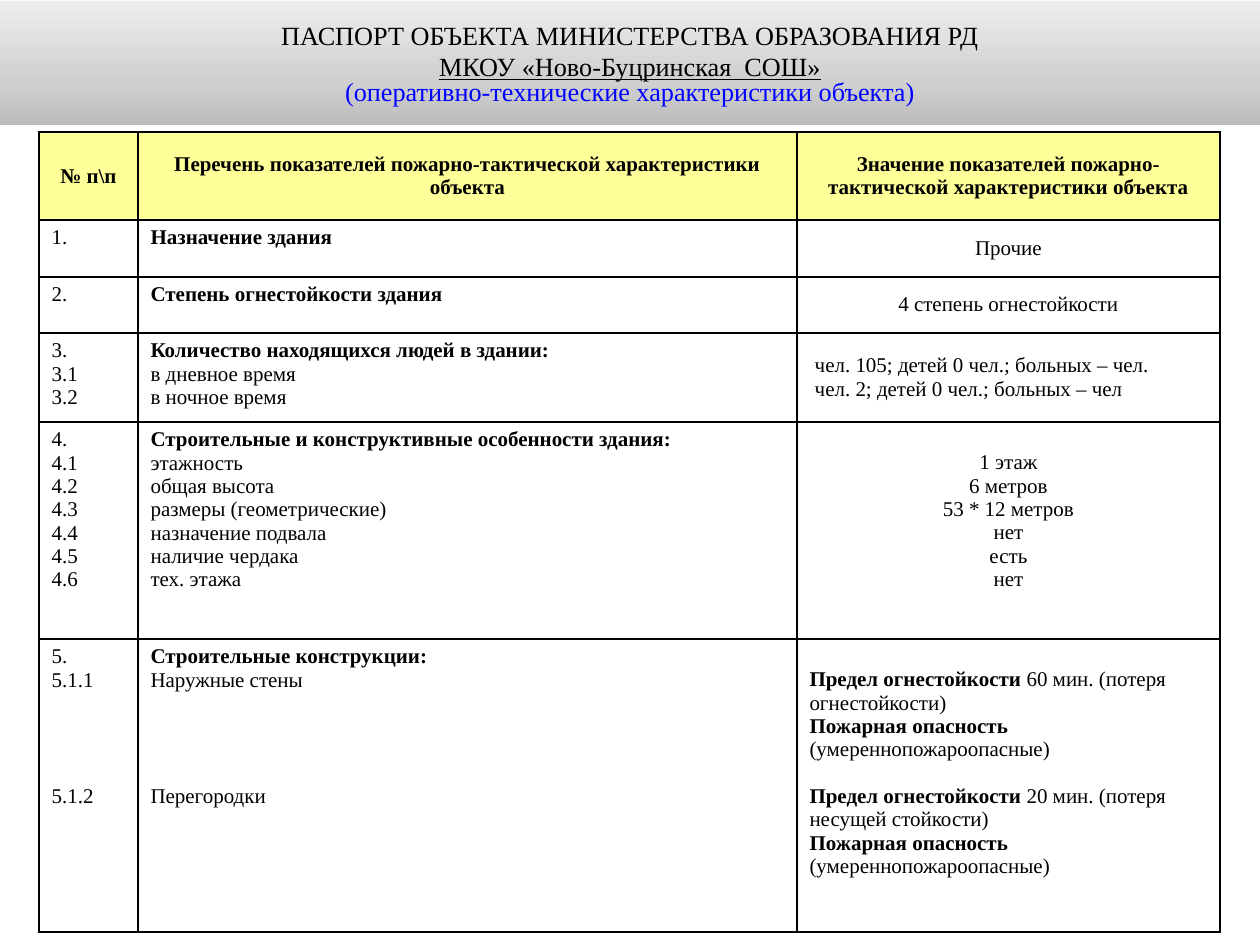
import copy

import lxml.etree
import pptx
import pptx.dml.color
import pptx.enum.shapes
import pptx.enum.text
import pptx.oxml
import pptx.oxml.ns
import pptx.util

SCALE = 914400 / 126
ALIGN = pptx.enum.text.PP_ALIGN
MIDDLE = pptx.enum.text.MSO_ANCHOR.MIDDLE
LINE = 13.3  # height in points of one line of table text


def px(n):
    return pptx.util.Emu(round(n * SCALE))


def rgb(value):
    return pptx.dml.color.RGBColor.from_string(value)


class Deck:
    font = "Times New Roman"
    black = "000000"
    cell_size = 12
    title_size = 15

    def __init__(self, width, height):
        self.prs = pptx.Presentation()
        self.prs.slide_width, self.prs.slide_height = px(width), px(height)
        self.s = self.prs.slides.add_slide(self.prs.slide_layouts[6])

    def format_run(self, r, size, color=black, bold=False, underline=False):
        r.font.name, r.font.size = self.font, pptx.util.Pt(size)
        r.font.bold, r.font.underline = bold, underline
        r.font.color.rgb = rgb(color)

    def banner(self, x, y, w, h, stops, lines):
        """Stops run from bottom to top; lines are (text, run style, line spacing)."""
        sp = self.s.shapes.add_shape(
            pptx.enum.shapes.MSO_SHAPE.RECTANGLE, px(x), px(y), px(w), px(h))
        sp.shadow.inherit = False
        sp.line.fill.background()
        sp.fill.gradient()
        sp.fill.gradient_angle = 90
        first = sp.fill._fill._gradFill.gsLst[0]
        first.addnext(copy.deepcopy(first))
        for stop, (position, color) in zip(sp.fill.gradient_stops, stops):
            stop.position, stop.color.rgb = position, rgb(color)
        tf = sp.text_frame
        tf.word_wrap, tf.vertical_anchor = True, MIDDLE
        for i, (text, style, spacing) in enumerate(lines):
            p = tf.add_paragraph() if i else tf.paragraphs[0]
            p.text, p.alignment, p.line_spacing = text, ALIGN.CENTER, spacing
            self.format_run(p.runs[0], self.title_size, **style)

    def borders(self, cell):
        tc_pr = cell._tc.get_or_add_tcPr()
        for i, side in enumerate(("lnL", "lnR", "lnT", "lnB")):
            tc_pr.insert(i, pptx.oxml.parse_xml(
                f'<a:{side} {pptx.oxml.ns.nsdecls("a")} w="12700"><a:solidFill>'
                f'<a:srgbClr val="{self.black}"/></a:solidFill></a:{side}>'))

    def cell(self, cell, lines, fill, centred=False, middle=False):
        """A line is text with #bold# parts, or (blank lines above, text)."""
        cell.fill.solid()
        cell.fill.fore_color.rgb = rgb(fill)
        self.borders(cell)
        if middle:
            cell.vertical_anchor = MIDDLE
        tf = cell.text_frame
        for i, line in enumerate(lines):
            gap, text = line if isinstance(line, tuple) else (0, line)
            p = tf.add_paragraph() if i else tf.paragraphs[0]
            p.alignment = ALIGN.CENTER if centred else ALIGN.LEFT
            if gap and i:
                p.space_before = pptx.util.Pt(gap * LINE)
            elif gap:
                cell.margin_top = px(6) + pptx.util.Pt(gap * LINE)
            for j, part in enumerate(text.split("#")):
                if part:
                    r = p.add_run()
                    r.text = part
                    self.format_run(r, self.cell_size, bold=j % 2 == 1)

    def table(self, x, y, widths, heights, header, rows):
        """Each row is (numbers, indicators, values, values centred, values middle)."""
        table = self.s.shapes.add_table(
            len(heights), len(widths), px(x), px(y),
            px(sum(widths)), px(sum(heights))).table
        table.first_row = table.horz_banding = False
        for column, width in zip(table.columns, widths):
            column.width = px(width)
        for row, height in zip(table.rows, heights):
            row.height = px(height)
        for c, text in enumerate(header):
            self.cell(table.cell(0, c), [f"#{text}#"], "FFFF99", True, True)
        for i, (numbers, indicators, values, centred, middle) in enumerate(rows, 1):
            self.cell(table.cell(i, 0), numbers, "FFFFFF")
            self.cell(table.cell(i, 1), indicators, "FFFFFF")
            self.cell(table.cell(i, 2), values, "FFFFFF", centred, middle)


HEADER = ["№ п\\п",
          "Перечень показателей пожарно-тактической характеристики объекта",
          "Значение показателей пожарно-тактической характеристики объекта"]
ROWS = [
    (["1."], ["#Назначение здания#"], ["Прочие"], True, True),
    (["2."], ["#Степень огнестойкости здания#"],
     ["4 степень огнестойкости"], True, True),
    (["3.", "3.1", "3.2"],
     ["#Количество находящихся людей в здании:#", "в дневное время", "в ночное время"],
     [" чел. 105; детей 0 чел.; больных – чел.",
      " чел. 2; детей 0 чел.; больных – чел"], False, True),
    (["4."] + [f"4.{n}" for n in range(1, 7)],
     ["#Строительные и конструктивные особенности здания:#", "этажность",
      "общая высота", "размеры (геометрические)", "назначение подвала",
      "наличие чердака", "тех. этажа"],
     [(1, "1 этаж"), "6 метров", "53 * 12 метров", "нет", "есть", "нет"], True, False),
    (["5.", "5.1.1", (4, "5.1.2")],
     ["#Строительные конструкции:#", "Наружные стены", (4, "Перегородки")],
     [(1, "#Предел огнестойкости #60 мин. (потеря огнестойкости)"),
      "#Пожарная опасность #(умереннопожароопасные)",
      (1, "#Предел огнестойкости #20 мин. (потеря несущей стойкости)"),
      "#Пожарная опасность#", "(умереннопожароопасные)"], False, False),
]


def main():
    deck = Deck(1260, 945)
    deck.table(39, 132, [99, 659, 423], [88, 57, 56, 89, 217, 293], HEADER, ROWS)
    deck.banner(
        0, 1, 1260, 124, [(0, "BCBCBC"), (0.35, "D0D0D0"), (1, "EDEDED")],
        [("ПАСПОРТ ОБЪЕКТА МИНИСТЕРСТВА ОБРАЗОВАНИЯ РД", {}, 1.0),
         ("МКОУ «Ново-Буцринская  СОШ»", {"underline": True}, 1.0),
         ("(оперативно-технические характеристики объекта)",
          {"color": "0000FF"}, 0.8)])
    deck.prs.save("out.pptx")


if __name__ == "__main__":
    main()
